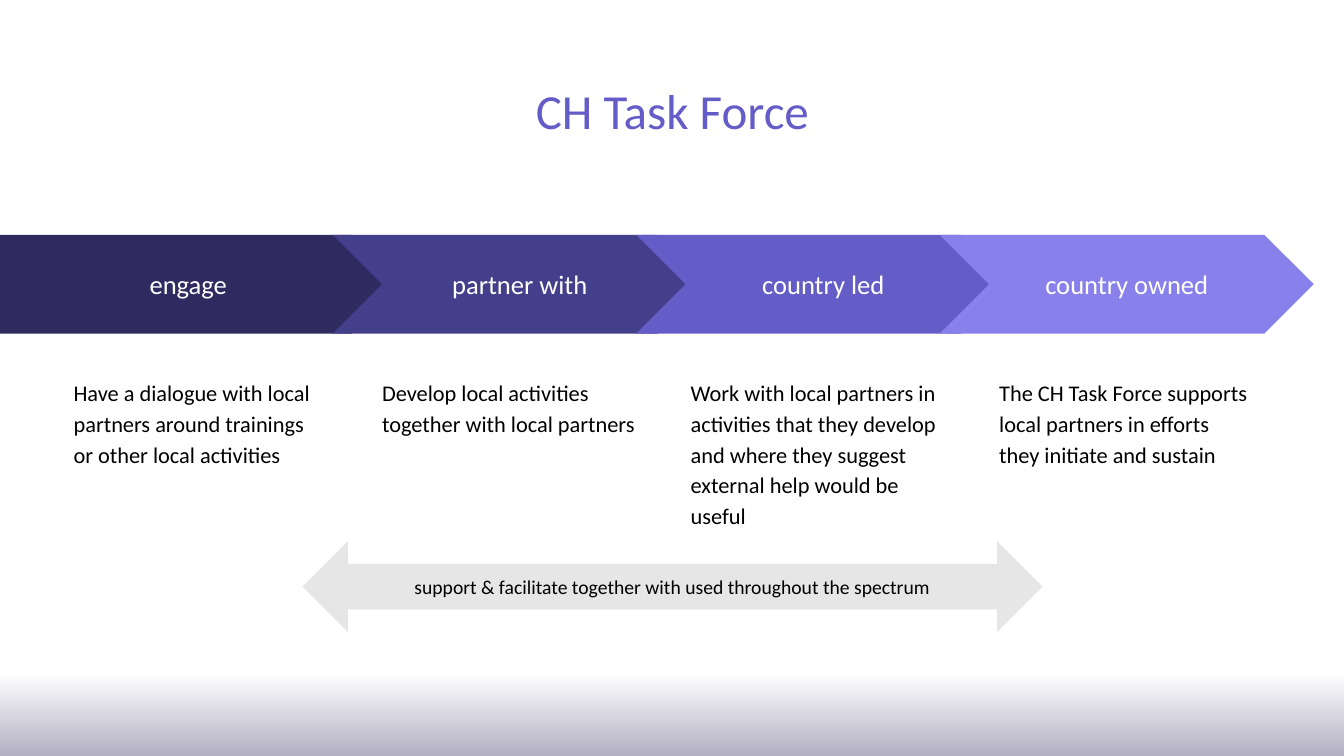
from pptx import Presentation
from pptx.dml.color import RGBColor
from pptx.enum.shapes import MSO_SHAPE
from pptx.enum.text import MSO_ANCHOR, MSO_AUTO_SIZE, PP_ALIGN
from pptx.util import Inches, Pt

PENTAGON, CHEVRON = MSO_SHAPE.PENTAGON, MSO_SHAPE.CHEVRON
DOUBLE_ARROW = MSO_SHAPE.LEFT_RIGHT_ARROW
TOP, MIDDLE = MSO_ANCHOR.TOP, MSO_ANCHOR.MIDDLE
LEFT, CENTER = PP_ALIGN.LEFT, PP_ALIGN.CENTER
NO_FIT = MSO_AUTO_SIZE.NONE

COLORS = {
    "white": "FFFFFF",
    "black": "000000",
    "gray": "E7E6E6",
    "haze": "B2AFC3",
    "title": "645DC7",
    "engage": "2F2B61",
    "partner": "443F8A",
    "led": "645DC7",
    "owned": "8881EC",
}

STAGES = [
    ("engage", "engage",
     "Have a dialogue with local partners around trainings or other local activities", 1.45),
    ("partner with", "partner",
     "Develop local activities together with local partners", 1.3),
    ("country led", "led",
     "Work with local partners in activities that they develop and where they suggest "
     "external help would be useful", 1.93),
    ("country owned", "owned",
     "The CH Task Force supports local partners in efforts they initiate and sustain", 1.7),
]


def rgb(name):
    return RGBColor.from_string(COLORS[name])


class SlideBuilder:
    font = "Calibri"

    def __init__(self, prs):
        self.slide = prs.slides.add_slide(prs.slide_layouts[5])

    def background(self, *stops):
        fill = self.slide.background.fill
        fill.gradient()
        fill.gradient_angle = 270
        for stop, (position, color) in zip(fill.gradient_stops, stops):
            stop.position = position
            stop.color.rgb = rgb(color)

    def set_text(self, s, text, size, color, align=CENTER, anchor=MIDDLE, inset=0.13, spacing=1.0):
        tf = s.text_frame
        tf.text = text
        tf.word_wrap = True
        tf.auto_size = NO_FIT
        tf.vertical_anchor = anchor
        tf.margin_left = tf.margin_right = tf.margin_top = tf.margin_bottom = Inches(inset)
        p = tf.paragraphs[0]
        p.alignment = align
        p.line_spacing = spacing
        font = p.runs[0].font
        font.name, font.size, font.color.rgb = self.font, Pt(size), rgb(color)

    def title(self, text, x, y, w, h):
        s = self.slide.shapes.title
        s.left, s.top, s.width, s.height = map(Inches, (x, y, w, h))
        self.set_text(s, text, 35, "title", inset=0.1, spacing=0.9)

    def group(self):
        return self.slide.shapes.add_group_shape().shapes

    def arrow(self, shapes, kind, x, y, w, h, fill, text, size, color, inset=0.13):
        s = shapes.add_shape(kind, *map(Inches, (x, y, w, h)))
        s.shadow.inherit = False
        s.fill.solid()
        s.fill.fore_color.rgb = rgb(fill)
        s.line.fill.background()
        self.set_text(s, text, size, color, inset=inset)

    def textbox(self, shapes, text, x, y, w, h):
        s = shapes.add_textbox(*map(Inches, (x, y, w, h)))
        self.set_text(s, text, 16, "black", LEFT, TOP, spacing=1.15)


def main():
    prs = Presentation()
    prs.slide_width, prs.slide_height = Inches(13.33), Inches(7.5)
    sb = SlideBuilder(prs)
    sb.background((0.89, "white"), (1.0, "haze"))
    sb.title("CH Task Force", 0.92, 0.4, 11.5, 1.45)

    # Four stages: an arrow with its description below
    for i, (label, color, description, height) in enumerate(STAGES):
        shapes = sb.group()
        kind, x, w = (CHEVRON, 0.29 + 3.01 * i, 3.71) if i else (PENTAGON, 0, 3.98)
        sb.arrow(shapes, kind, x, 2.33, w, 0.98, color, label, 19, "white")
        sb.textbox(shapes, description, 0.6 + 3.06 * i, 3.59, 2.78, height)

    # Support across the whole spectrum
    sb.arrow(sb.slide.shapes, DOUBLE_ARROW, 3, 5.37, 7.34, 0.9, "gray",
             "support & facilitate together with used throughout the spectrum",
             14, "black", inset=0.1)
    prs.save("out.pptx")


if __name__ == "__main__":
    main()
